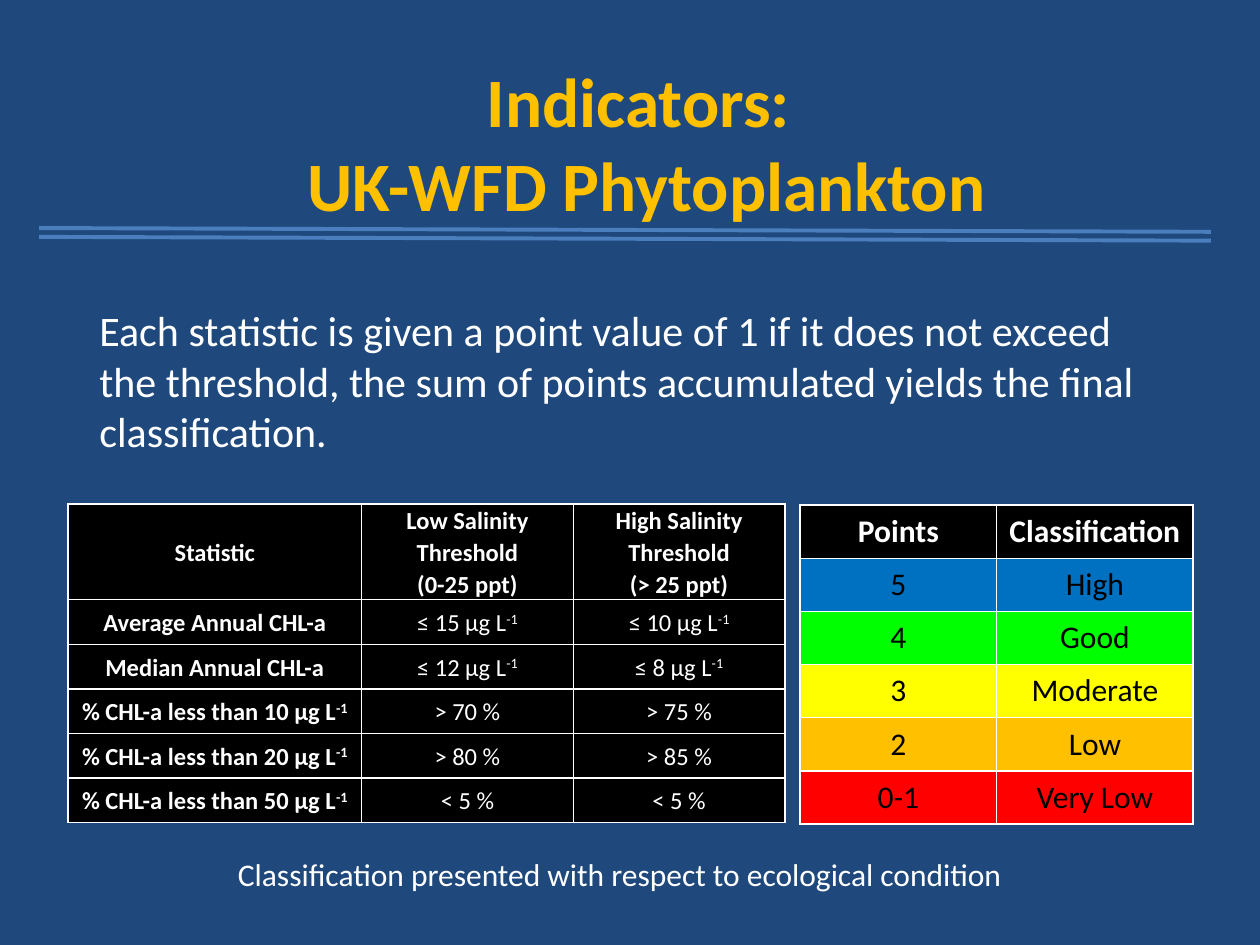
from lxml.etree import SubElement
from pptx import Presentation
from pptx.dml.color import RGBColor
from pptx.enum.shapes import MSO_CONNECTOR
from pptx.enum.text import MSO_ANCHOR, MSO_AUTO_SIZE, PP_ALIGN
from pptx.oxml.ns import qn
from pptx.util import Inches, Pt

FONT = "Calibri"
COLORS = {
    "background": "1F497D",
    "title": "FFC000",
    "rule": "4B7EBC",
    "white": "FFFFFF",
    "black": "000000",
    "High": "0070C0",
    "Good": "00FF00",
    "Moderate": "FFFF00",
    "Low": "FFC000",
    "Very Low": "FF0000",
}
THRESHOLDS = [
    ("Statistic", "Low Salinity Threshold\n(0-25 ppt)", "High Salinity Threshold\n(> 25 ppt)"),
    ("Average Annual CHL-a", "≤ 15 µg L^-1", "≤ 10 µg L^-1"),
    ("Median Annual CHL-a", "≤ 12 µg L^-1", "≤ 8 µg L^-1"),
    ("% CHL-a less than 10 µg L^-1", "> 70 %", "> 75 %"),
    ("% CHL-a less than 20 µg L^-1", "> 80 %", "> 85 %"),
    ("% CHL-a less than 50 µg L^-1", "< 5 %", "< 5 %"),
]
CLASSES = [
    ("Points", "Classification"),
    ("5", "High"),
    ("4", "Good"),
    ("3", "Moderate"),
    ("2", "Low"),
    ("0-1", "Very Low"),
]


def rgb(name):
    return RGBColor.from_string(COLORS[name])


def write(frame, text, size, color="white", bold=False, align=PP_ALIGN.LEFT,
          line_spacing=None, space_before=None):
    """Fill a frame: newline starts a paragraph, \\v breaks a line, ^ starts a superscript."""
    for index, content in enumerate(text.split("\n")):
        para = frame.add_paragraph() if index else frame.paragraphs[0]
        para.alignment = align
        para.line_spacing = line_spacing
        para.space_before = space_before
        for number, line in enumerate(content.split("\v")):
            if number:
                para.add_line_break()
            base, _, raised = line.partition("^")
            for part, baseline in ((base, None), (raised, "30000")):
                if not part:
                    continue
                span = para.add_run()
                span.text = part
                span.font.name = FONT
                span.font.size = Pt(size)
                span.font.bold = bold
                span.font.color.rgb = rgb(color)
                if baseline:
                    span.font._element.set("baseline", baseline)


def add_text(page, left, top, width, height, text, size, anchor=MSO_ANCHOR.TOP,
             wrap=True, **style):
    box = page.shapes.add_textbox(Inches(left), Inches(top), Inches(width), Inches(height))
    frame = box.text_frame
    frame.word_wrap = wrap
    frame.vertical_anchor = anchor
    if not wrap:
        frame.auto_size = MSO_AUTO_SIZE.SHAPE_TO_FIT_TEXT
    write(frame, text, size, **style)


def add_rule(page, top):
    rule = page.shapes.add_connector(
        MSO_CONNECTOR.STRAIGHT, Inches(0.31), Inches(top), Inches(9.61), Inches(top + 0.03))
    rule.line.color.rgb = rgb("rule")
    rule.line.width = Pt(2.25)
    SubElement(rule._element.spPr, qn("a:effectLst"))


def add_borders(cell):
    properties = cell._tc.get_or_add_tcPr()
    for side in ("lnL", "lnR", "lnT", "lnB"):
        line = SubElement(properties, qn(f"a:{side}"), w=str(Pt(1)))
        fill = SubElement(line, qn("a:solidFill"))
        SubElement(fill, qn("a:srgbClr"), val=COLORS["white"])


def add_grid(page, left, top, widths, heights, rows, margins, style_of, **style):
    """Add a table; style_of(row, column) gives a cell's fill, font colour and weight."""
    table = page.shapes.add_table(
        len(rows), len(widths), Inches(left), Inches(top),
        Inches(sum(widths)), Inches(sum(heights))).table
    for column, width in zip(table.columns, widths):
        column.width = Inches(width)
    for row, height in zip(table.rows, heights):
        row.height = Inches(height)
    side, edge = (Inches(margin) for margin in margins)
    for r, texts in enumerate(rows):
        for c, text in enumerate(texts):
            cell = table.cell(r, c)
            fill, color, bold = style_of(r, c)
            cell.margin_left = cell.margin_right = side
            cell.margin_top = cell.margin_bottom = edge
            cell.vertical_anchor = MSO_ANCHOR.MIDDLE
            add_borders(cell)
            cell.fill.solid()
            cell.fill.fore_color.rgb = rgb(fill)
            write(cell.text_frame, text, color=color, bold=bold,
                  align=PP_ALIGN.CENTER, **style)


def threshold_style(row, column):
    return "black", "white", row == 0 or column == 0


def class_style(row, column):
    return ("black", "white", True) if row == 0 else (CLASSES[row][1], "black", False)


def main():
    deck = Presentation()
    deck.slide_width, deck.slide_height = Inches(10), Inches(7.5)
    page = deck.slides.add_slide(deck.slide_layouts[6])
    page.background.fill.solid()
    page.background.fill.fore_color.rgb = rgb("background")

    add_text(page, 0.69, 0.4, 8.88, 1.45, "Indicators: \vUK-WFD Phytoplankton", 39.6,
             anchor=MSO_ANCHOR.MIDDLE, color="title", bold=True, align=PP_ALIGN.CENTER)
    add_text(page, 0.69, 2.37, 8.62, 4.76,
             "Each statistic is given a point value of 1 if it does not exceed the threshold, "
             "the sum of points accumulated yields the final classification.",
             24, space_before=Pt(4.8))

    add_grid(page, 0.54, 4, [2.33, 1.68, 1.68], [0.76] + [1.77 / 5] * 5, THRESHOLDS,
             (0.06, 0), threshold_style, size=14, line_spacing=1.07)
    add_grid(page, 6.35, 4.01, [1.56] * 2, [2.53 / 6] * 6, CLASSES,
             (0.07, 0.04), class_style, size=18)

    for top in (1.81, 1.88):
        add_rule(page, top)
    add_text(page, 1.79, 6.74, 6.34, 0.4,
             "Classification presented with respect to ecological condition", 18, wrap=False)
    deck.save("out.pptx")


if __name__ == "__main__":
    main()
